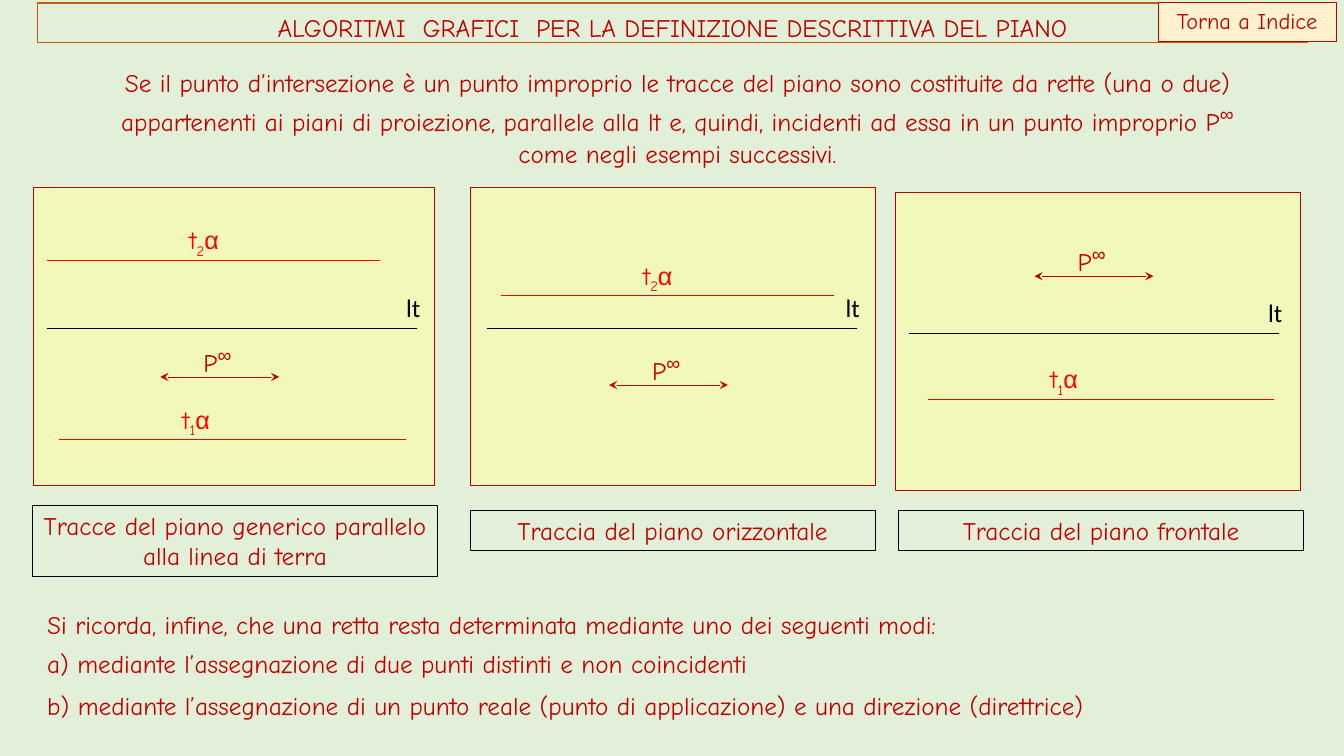
from lxml.etree import SubElement
from pptx import Presentation
from pptx.dml.color import RGBColor
from pptx.enum.shapes import MSO_CONNECTOR, MSO_SHAPE
from pptx.enum.text import MSO_ANCHOR, MSO_AUTO_SIZE, PP_ALIGN
from pptx.oxml.ns import qn
from pptx.util import Inches, Pt

COLORS = {
    "background": "E2F0D9",
    "panel": "F1F8B9",
    "button": "FFF2CC",
    "title_border": "C55A11",
    "dark_red": "C00000",
    "red": "FF0000",
    "black": "000000",
}
FRAME_FORMAT = {
    "word_wrap": True,
    "auto_size": MSO_AUTO_SIZE.SHAPE_TO_FIT_TEXT,
    "vertical_anchor": MSO_ANCHOR.TOP,
}
COMIC, ARIAL, CALIBRI = "Comic Neue", "Arial", "Calibri"
INFINITY = ("∞", ARIAL, 24, 30)  # text, font, size, baseline percent


def add_box(shapes, place, paragraphs=(), color="dark_red", align=PP_ALIGN.LEFT,
            border=None, width=0.25, fill=None):
    """Add a text box, or a rectangle when a border is given."""
    lengths = [Inches(value) for value in place]
    if border:
        shape = shapes.add_shape(MSO_SHAPE.RECTANGLE, *lengths)
        shape.shadow.inherit = False
        shape.line.color.rgb = RGBColor.from_string(COLORS[border])
        shape.line.width = Pt(width)
        if fill:
            shape.fill.solid()
            shape.fill.fore_color.rgb = RGBColor.from_string(COLORS[fill])
        else:
            shape.fill.background()
    else:
        shape = shapes.add_textbox(*lengths)
    if not paragraphs:
        return shape
    frame = shape.text_frame
    for name, value in FRAME_FORMAT.items():
        setattr(frame, name, value)
    for index, runs in enumerate(paragraphs):
        paragraph = frame.add_paragraph() if index else frame.paragraphs[0]
        paragraph.alignment = align
        for text, font, size, baseline in runs:
            run = paragraph.add_run()
            run.text = text
            for name, value in {"name": font, "size": Pt(size)}.items():
                setattr(run.font, name, value)
            run.font.color.rgb = RGBColor.from_string(COLORS[color])
            if baseline:
                run._r.get_or_add_rPr().set("baseline", str(baseline * 1000))
    return shape


def add_level_line(shapes, left, right, y, color, width=0.25, arrows=False):
    """Add a horizontal line, with arrowheads at both ends if asked."""
    line = shapes.add_connector(MSO_CONNECTOR.STRAIGHT, Inches(left), Inches(y),
                                Inches(right), Inches(y))
    line.line.color.rgb = RGBColor.from_string(COLORS[color])
    line.line.width = Pt(width)
    if arrows:
        outline = line.line._get_or_add_ln()
        for end in ("a:headEnd", "a:tailEnd"):
            SubElement(outline, qn(end), type="stealth")
    SubElement(line._element.spPr, qn("a:effectLst"))


presentation = Presentation()
presentation.slide_width = Inches(13.33)
presentation.slide_height = Inches(7.5)
slide = presentation.slides.add_slide(presentation.slide_layouts[6])
slide.background.fill.solid()
slide.background.fill.fore_color.rgb = RGBColor.from_string(COLORS["background"])

# Title
title = add_box(
    slide.shapes, (0.37, 0.03, 12.6, 0.39),
    [[("ALGORITMI  GRAFICI  PER LA DEFINIZIONE DESCRITTIVA DEL PIANO", COMIC, 18, 0)]],
    align=PP_ALIGN.CENTER, border="title_border", width=0.75)
title.text_frame.paragraphs[0].line_spacing = 1.15

# Introduction
introduction = (
    "Se il punto d’intersezione è un punto improprio le tracce del piano sono "
    "costituite da rette (una o due) appartenenti ai piani di proiezione, parallele "
    "alla lt e, quindi, incidenti ad essa in un punto improprio P")
add_box(slide.shapes, (0.47, 0.62, 12.5, 1.01),
        [[(introduction, COMIC, 18, 0), INFINITY],
         [("come negli esempi successivi.", COMIC, 18, 0)]], align=PP_ALIGN.CENTER)

# Captions below the panels
captions = [
    (0.32, 5.01, 0.71, "Tracce del piano generico parallelo alla linea di terra"),
    (4.66, 5.06, 0.4, "Traccia del piano orizzontale"),
    (8.91, 5.06, 0.4, "Traccia del piano frontale"),
]
for left, top, height, text in captions:
    add_box(slide.shapes, (left, top, 4.02, height), [[(text, COMIC, 18, 0)]],
            align=PP_ALIGN.CENTER, border="black")

# Closing reminder
reminders = [
    (6, 9.95, "Si ricorda, infine, che una retta resta determinata mediante uno dei "
              "seguenti modi:"),
    (6.38, 7.68, "a) mediante l’assegnazione di due punti distinti e non coincidenti"),
    (6.8, 11.27, "b) mediante l’assegnazione di un punto reale (punto di applicazione) e "
                 "una direzione (direttrice)"),
]
for top, width, text in reminders:
    add_box(slide.shapes, (0.37, top, width, 0.4), [[(text, COMIC, 18, 0)]])

# Panels: left, top, width, ground line left,
# traces as (index, label left, line left, line right, y)
panels = [
    (0.33, 1.86, 3.98, 0.47, [("1", 1.71, 0.59, 4.03, 4.36), ("2", 1.78, 0.47, 3.77, 2.58)]),
    (4.66, 1.86, 4.02, 4.83, [("2", 6.28, 4.97, 8.27, 2.93)]),
    (8.88, 1.91, 4.02, 9.02, [("1", 10.32, 9.2, 12.64, 3.96)]),
]
for left, top, width, ground_left, traces in panels:
    shapes = slide.shapes.add_group_shape().shapes
    add_box(shapes, (left, top, width, 2.95), border="dark_red", fill="panel")
    ground_right, ground_y = ground_left + 3.67, top + 1.4
    add_level_line(shapes, ground_left, ground_right, ground_y, "black")
    add_box(shapes, (ground_right - 0.21, ground_y - 0.41, 0.4, 0.4),
            [[("lt", CALIBRI, 18, 0)]], color="black")
    for index, label_left, line_left, line_right, y in traces:
        add_box(shapes, (label_left, y - 0.4, 0.59, 0.4),
                [[("t", COMIC, 18, 0), (index, COMIC, 18, -25), ("α", ARIAL, 18, 0)]],
                color="red")
        add_level_line(shapes, line_left, line_right, y, "red")

# Directions of the improper points
for left, y in [(1.59, 3.74), (6.04, 3.82), (10.26, 2.74)]:
    add_level_line(slide.shapes, left, left + 1.18, y, "dark_red", 0.5, arrows=True)
    add_box(slide.shapes, (left + 0.33, y - 0.43, 0.53, 0.5),
            [[("P", COMIC, 18, 0), INFINITY]])

# Index button
add_box(slide.shapes, (11.49, 0.02, 1.76, 0.39), [[("Torna a Indice", COMIC, 16, 0)]],
        align=PP_ALIGN.CENTER, border="dark_red", fill="button")

presentation.save("out.pptx")
